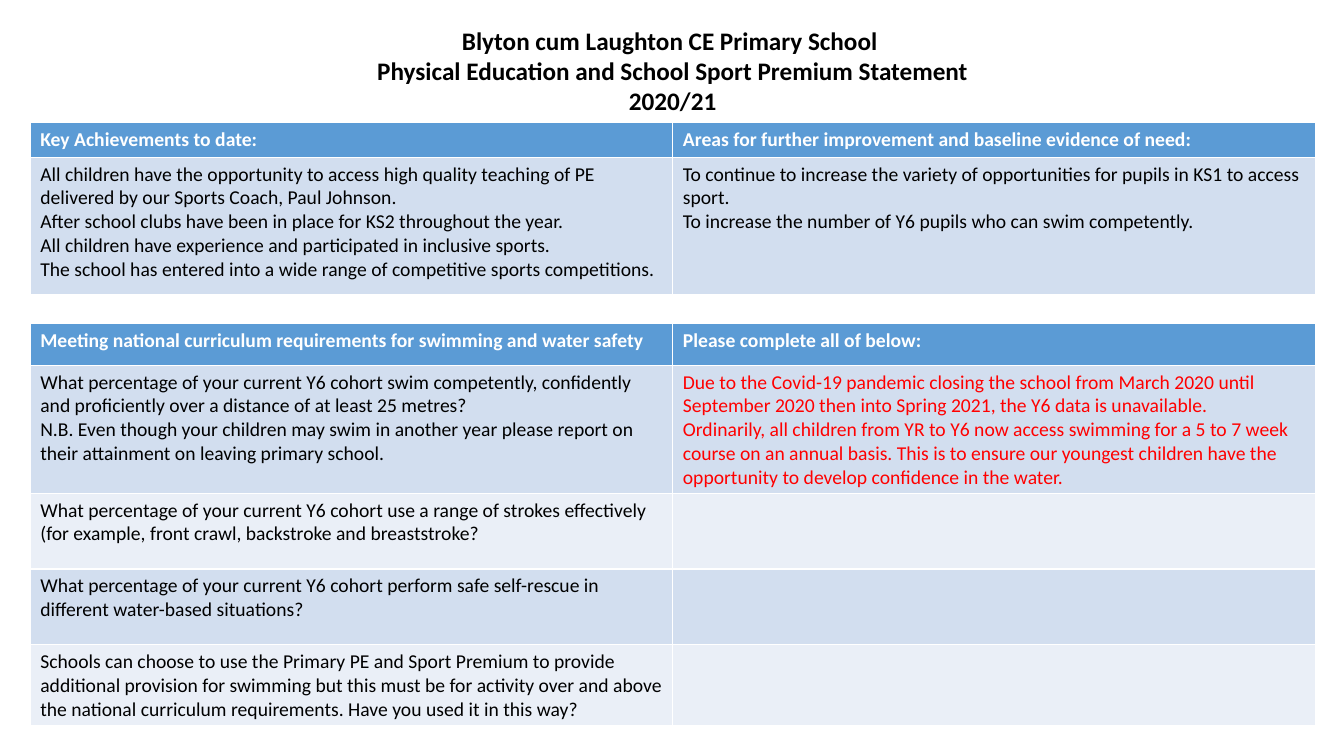
from pptx import Presentation
from pptx.dml.color import RGBColor
from pptx.enum.text import MSO_ANCHOR, MSO_AUTO_SIZE, PP_ALIGN
from pptx.util import Pt

TOP = MSO_ANCHOR.TOP
FIT_SHAPE = MSO_AUTO_SIZE.SHAPE_TO_FIT_TEXT
CENTER = PP_ALIGN.CENTER

BLACK = RGBColor(0x00, 0x00, 0x00)
WHITE = RGBColor(0xFF, 0xFF, 0xFF)
RED = RGBColor(0xFF, 0x00, 0x00)
HEADER_BLUE = RGBColor(0x5B, 0x9B, 0xD5)
BANDS = [RGBColor(0xD2, 0xDE, 0xEF), RGBColor(0xEA, 0xEF, 0xF7)]

FONT = "Calibri"
TABLE_LEFT = 21.6
COLUMN_WIDTH = 459

TITLE = """Blyton cum Laughton CE Primary School 
Physical Education and School Sport Premium Statement
2020/21"""

ACHIEVEMENTS = [
    ("Key Achievements to date:",
     "Areas for further improvement and baseline evidence of need:"),
    ("""All children have the opportunity to access high quality teaching of PE delivered by our Sports Coach, Paul Johnson.
After school clubs have been in place for KS2 throughout the year.
All children have experience and participated in inclusive sports.
The school has entered into a wide range of competitive sports competitions.""",
     """To continue to increase the variety of opportunities for pupils in KS1 to access sport.
To increase the number of Y6 pupils who can swim competently."""),
]

SWIMMING = [
    ("Meeting national curriculum requirements for swimming and water safety",
     "Please complete all of below:"),
    ("""What percentage of your current Y6 cohort swim competently, confidently and proficiently over a distance of at least 25 metres?
N.B. Even though your children may swim in another year please report on their attainment on leaving primary school.""",
     """Due to the Covid-19 pandemic closing the school from March 2020 until September 2020 then into Spring 2021, the Y6 data is unavailable.
Ordinarily, all children from YR to Y6 now access swimming for a 5 to 7 week course on an annual basis. This is to ensure our youngest children have the opportunity to develop confidence in the water."""),
    ("What percentage of your current Y6 cohort use a range of strokes effectively (for example, front crawl, backstroke and breaststroke?", ""),
    ("What percentage of your current Y6 cohort perform safe self-rescue in different water-based situations?", ""),
    ("Schools can choose to use the Primary PE and Sport Premium to provide additional provision for swimming but this must be for activity over and above the national curriculum requirements. Have you used it in this way?", ""),
]


def set_text(text_frame, text, size, color, bold):
    text_frame.text = text
    for paragraph in text_frame.paragraphs:
        paragraph.font.name = FONT
        paragraph.font.size = Pt(size)
        paragraph.font.color.rgb = color
        paragraph.font.bold = bold


def add_statement_table(slide, top, row_heights, rows, answer_color):
    """Add a two-column table; answer_color is for the right column's body."""
    table = slide.shapes.add_table(
        len(rows), 2, Pt(TABLE_LEFT), Pt(top),
        Pt(2 * COLUMN_WIDTH), Pt(sum(row_heights))).table
    for column in table.columns:
        column.width = Pt(COLUMN_WIDTH)
    for row_index, (height, texts) in enumerate(zip(row_heights, rows)):
        table.rows[row_index].height = Pt(height)
        is_header = row_index == 0
        fill_color = HEADER_BLUE if is_header else BANDS[(row_index - 1) % 2]
        for column_index, text in enumerate(texts):
            cell = table.cell(row_index, column_index)
            cell.fill.solid()
            cell.fill.fore_color.rgb = fill_color
            body_color = answer_color if column_index else BLACK
            set_text(cell.text_frame, text, 14,
                     WHITE if is_header else body_color, is_header)


presentation = Presentation()
presentation.slide_width = Pt(960)
presentation.slide_height = Pt(540)
slide = presentation.slides.add_slide(presentation.slide_layouts[5])

title = slide.shapes.title
title.left, title.top, title.width, title.height = Pt(124.5), Pt(14.4), Pt(712), Pt(72.7)
title_frame = title.text_frame
title_frame.word_wrap = True
title_frame.auto_size = FIT_SHAPE
title_frame.vertical_anchor = TOP
set_text(title_frame, TITLE, 18, BLACK, True)
for paragraph in title_frame.paragraphs:
    paragraph.alignment = CENTER

add_statement_table(slide, 87.4, [25, 98], ACHIEVEMENTS, BLACK)
add_statement_table(slide, 231, [30, 91.5, 54, 54, 57.5], SWIMMING, RED)

presentation.save("out.pptx")
